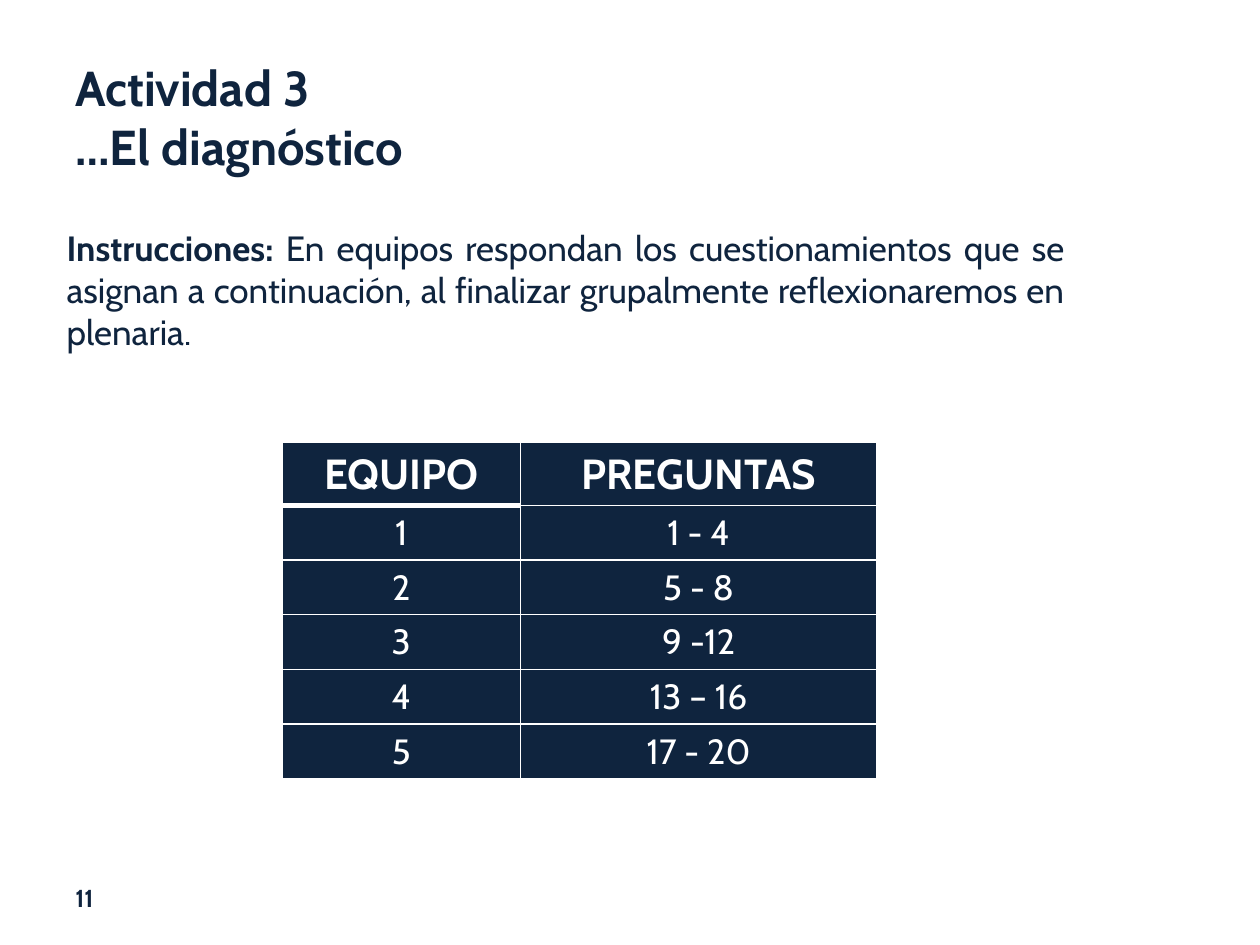
from lxml import etree
from pptx import Presentation, util as u
from pptx.dml.color import RGBColor
from pptx.enum import text
from pptx.oxml.ns import qn

NAVY = RGBColor(0x0F, 0x24, 0x3E)
WHITE = RGBColor(0xFF, 0xFF, 0xFF)
FONT = "Cabin"
ROWS = [
    ("EQUIPO", "PREGUNTAS"),
    ("1", "1 - 4"),
    ("2", "5 - 8"),
    ("3", "9 -12"),
    ("4", "13 – 16"),
    ("5", "17 - 20"),
]

prs = Presentation()
prs.slide_width, prs.slide_height = W, H = u.Inches(10), u.Inches(7.5)
s = prs.slides.add_slide(prs.slide_layouts[6])


def add_text(left, top, width, height, anchor, size, bold=None):
    """Add a text box placed by shares of the slide; return its first paragraph."""
    sp = s.shapes.add_textbox(int(left * W), int(top * H), int(width * W), int(height * H))
    tf = sp.text_frame
    tf.word_wrap = True
    tf.vertical_anchor = anchor
    p = tf.paragraphs[0]
    style(p, size, NAVY, bold)
    return p


def style(p, size, color, bold=None):
    p.font.name, p.font.size, p.font.bold = FONT, u.Pt(size), bold
    p.font.color.rgb = color


MIDDLE, TOP = text.MSO_ANCHOR.MIDDLE, text.MSO_ANCHOR.TOP

# Title, instructions and page number
p = add_text(0.05, 0.04, 0.81, 1 / 6, MIDDLE, 28, True)
p.text = "Actividad 3\v…El diagnóstico"

p = add_text(0.043, 0.233, 0.812, 0.215, TOP, 20)
p.alignment = text.PP_ALIGN.JUSTIFY
r = p.add_run()
r.text = "Instrucciones: "
r.font.bold = True
p.add_run().text = (
    "En equipos respondan los cuestionamientos que se asignan a continuación, "
    "al finalizar grupalmente reflexionaremos en plenaria."
)

p = add_text(0.05, 0.92, 0.064, 0.06, MIDDLE, 14, True)
p.text = "11"

# Teams and their questions
frame = s.shapes.add_table(len(ROWS), 2, int(0.224 * W), int(0.468 * H),
                           int(0.472 * W), int(0.328 * H))
table = frame.table
for column, share in zip(table.columns, (0.189, 0.283)):
    column.width = int(share * W)
for i, row in enumerate(ROWS):
    table.rows[i].height = int(0.055 * H)
    for j, label in enumerate(row):
        cell = table.cell(i, j)
        p = cell.text_frame.paragraphs[0]
        p.text = label
        p.alignment = text.PP_ALIGN.CENTER
        style(p, 24 if i == 0 else 20, WHITE, i == 0)

        # The rule under the first heading is thicker; borders precede the fill
        thick = {(0, 0): "B", (1, 0): "T"}.get((i, j))
        tcPr = cell._tc.get_or_add_tcPr()
        for side in "LRTB":
            ln = etree.SubElement(tcPr, qn(f"a:ln{side}"), w=str(u.Pt(3 if side == thick else 1)))
            fill = etree.SubElement(ln, qn("a:solidFill"))
            etree.SubElement(fill, qn("a:srgbClr"), val=str(WHITE))
        cell.fill.solid()
        cell.fill.fore_color.rgb = NAVY

prs.save("out.pptx")
